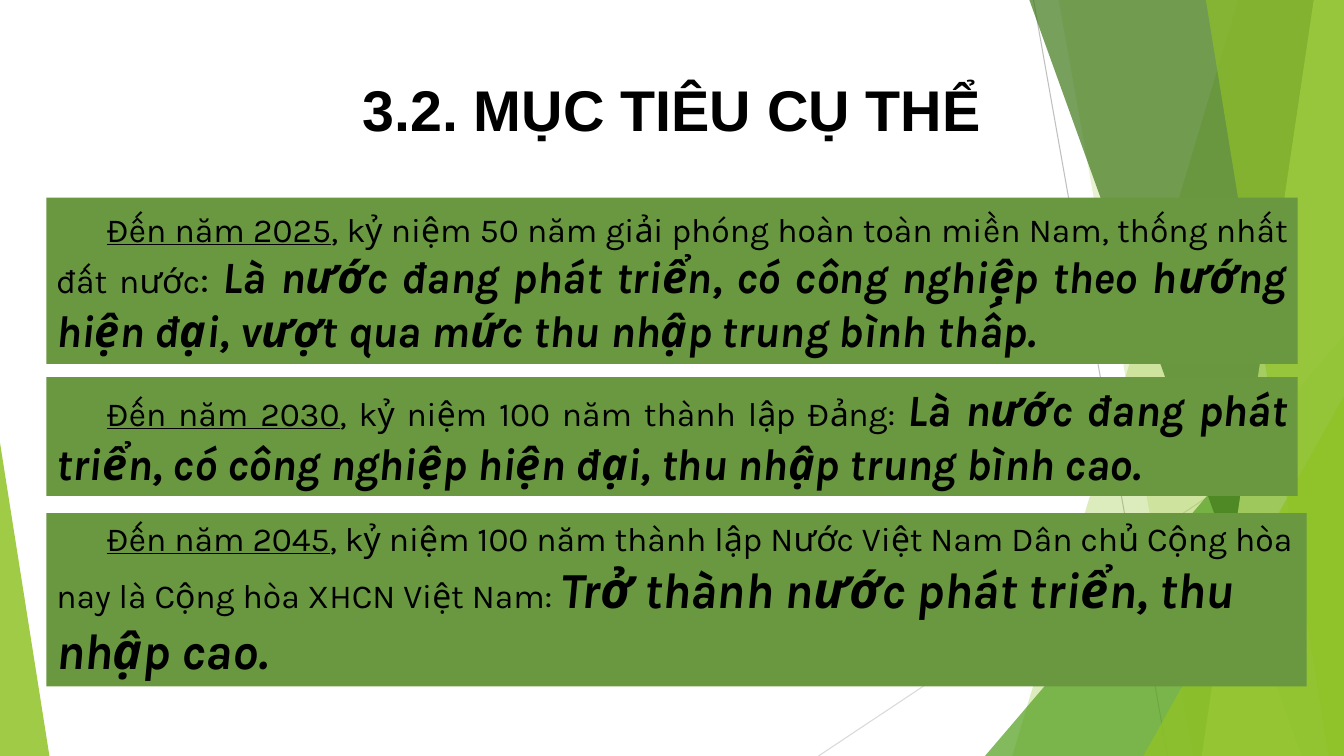
from dataclasses import dataclass

from lxml.etree import SubElement
from pptx import Presentation
from pptx.dml.color import RGBColor
from pptx.enum.shapes import MSO_CONNECTOR, MSO_SHAPE
from pptx.enum.text import MSO_ANCHOR, PP_ALIGN
from pptx.oxml.ns import qn
from pptx.util import Inches, Pt

WIDTH, HEIGHT = Inches(13.33), Inches(7.5)
TITLE_ONLY = 5


@dataclass(frozen=True)
class Theme:
    ink: str = "000000"
    panel: str = "699841"
    lime: str = "90C226"
    leaf: str = "54A021"
    forest: str = "3F7819"
    pale: str = "C0E474"
    line_dark: str = "BFBFBF"
    line_light: str = "D9D9D9"
    title_font: str = "Arial"
    body_font: str = "Karla"
    title_size: int = 41
    body_size: int = 24
    lead_size: int = 28
    goal_size: int = 32
    final_goal_size: int = 36


THEME = Theme()


def across(percent):
    return round(WIDTH * percent / 100)


def down(percent):
    return round(HEIGHT * percent / 100)


def place(box):
    """Turn left, top, width, height in percent of the slide into lengths."""
    left, top, width, height = box
    return across(left), down(top), across(width), down(height)


def paint(shape, color, opacity=100):
    shape.shadow.inherit = False
    shape.line.fill.background()
    shape.fill.solid()
    shape.fill.fore_color.rgb = RGBColor.from_string(color)
    if opacity < 100:
        color_element = shape._element.spPr.find(qn("a:solidFill"))[0]
        SubElement(color_element, qn("a:alpha"), val=str(opacity * 1000))


def add_hairline(slide, start, end, color):
    line = slide.shapes.add_connector(
        MSO_CONNECTOR.STRAIGHT, across(start[0]), down(start[1]), across(end[0]), down(end[1]))
    line.line.color.rgb = RGBColor.from_string(color)
    line.line.width = Pt(0.75)
    SubElement(line._element.spPr, qn("a:effectLst"))


def add_band(slide, top_x, bottom_x, color, opacity):
    """Fill the area between a slanted edge and the right side of the slide."""
    builder = slide.shapes.build_freeform(across(top_x), 0)
    builder.add_line_segments(
        [(WIDTH, 0), (WIDTH, HEIGHT), (across(bottom_x), HEIGHT)], close=True)
    paint(builder.convert_to_shape(), color, opacity)


def add_corner(slide, box, apex, color, opacity):
    triangle = slide.shapes.add_shape(MSO_SHAPE.ISOSCELES_TRIANGLE, *place(box))
    triangle.adjustments[0] = apex
    paint(triangle, color, opacity)


def add_background(slide):
    add_hairline(slide, (76.9, 0), (86.87, 100), THEME.line_dark)
    add_hairline(slide, (100, 53.73), (60.9, 100), THEME.line_light)
    add_band(slide, 92.12, 75.32, THEME.lime, 30)
    add_band(slide, 78.77, 88.75, THEME.lime, 20)
    add_corner(slide, (73.29, 44.4, 26.71, 55.6), 1, THEME.leaf, 72)
    add_band(slide, 76.59, 96.85, THEME.forest, 70)
    add_band(slide, 97.75, 89.42, THEME.pale, 70)
    add_band(slide, 89.72, 98.87, THEME.lime, 65)
    add_corner(slide, (85.07, 52.4, 14.93, 47.6), 1, THEME.lime, 80)
    add_corner(slide, (0, 58.53, 3.68, 41.47), 0, THEME.lime, 85)


def add_title(slide, box, text):
    title = slide.shapes.title
    title.left, title.top, title.width, title.height = place(box)
    title.text_frame.text = text
    title.text_frame.vertical_anchor = MSO_ANCHOR.MIDDLE
    paragraph = title.text_frame.paragraphs[0]
    paragraph.alignment = PP_ALIGN.CENTER
    paragraph.font.name = THEME.title_font
    paragraph.font.size = Pt(THEME.title_size)
    paragraph.font.bold = True
    paragraph.font.color.rgb = RGBColor.from_string(THEME.ink)


def add_goal(slide, box, year, occasion, separator, goal, goal_size, alignment,
             separator_size=THEME.body_size, top_inset=0.05):
    panel = slide.shapes.add_shape(MSO_SHAPE.RECTANGLE, *place(box))
    paint(panel, THEME.panel)
    frame = panel.text_frame
    frame.word_wrap = True
    frame.vertical_anchor = MSO_ANCHOR.TOP
    frame.margin_top = Inches(top_inset)
    paragraph = frame.paragraphs[0]
    paragraph.alignment = alignment
    paragraph.font.name = THEME.body_font
    paragraph.font.color.rgb = RGBColor.from_string(THEME.ink)
    paragraph._p.get_or_add_pPr().set("indent", str(Inches(0.5)))
    parts = [
        (year, THEME.body_size, True, False),
        (occasion, THEME.body_size, False, False),
        (separator, separator_size, False, False),
        (goal, goal_size, False, True),
    ]
    for text, size, underlined, strong in parts:
        run = paragraph.add_run()
        run.text = text
        run.font.size = Pt(size)
        run.font.underline = underlined
        run.font.bold = run.font.italic = strong


def add_goals(slide):
    add_goal(slide, (3.45, 26.13, 93.1, 22), "Đến năm 2025",
             ", kỷ niệm 50 năm giải phóng hoàn toàn miền Nam, thống nhất đất nước", ": ",
             "Là nước đang phát triển, có công nghiệp theo hướng hiện đại, "
             "vượt qua mức thu nhập trung bình thấp.",
             THEME.goal_size, PP_ALIGN.JUSTIFY,
             separator_size=THEME.lead_size, top_inset=0.11)
    add_goal(slide, (3.45, 49.87, 93.1, 15.73), "Đến năm 2030",
             ", kỷ niệm 100 năm thành lập Đảng", ": ",
             "Là nước đang phát triển, có công nghiệp hiện đại, thu nhập trung bình cao.",
             THEME.goal_size, PP_ALIGN.JUSTIFY)
    add_goal(slide, (3.45, 67.87, 93.77, 22.93), "Đến năm 2045",
             ", kỷ niệm 100 năm thành lập Nước Việt Nam Dân chủ Cộng hòa "
             "nay là Cộng hòa XHCN Việt Nam", ": ",
             "Trở thành nước phát triển, thu nhập cao.",
             THEME.final_goal_size, PP_ALIGN.LEFT)


def main():
    presentation = Presentation()
    presentation.slide_width, presentation.slide_height = WIDTH, HEIGHT
    slide = presentation.slides.add_slide(presentation.slide_layouts[TITLE_ONLY])
    add_background(slide)
    add_title(slide, (5.33, 8.27, 89.35, 12.13), "3.2. MỤC TIÊU CỤ THỂ")
    add_goals(slide)
    presentation.save("out.pptx")


if __name__ == "__main__":
    main()
